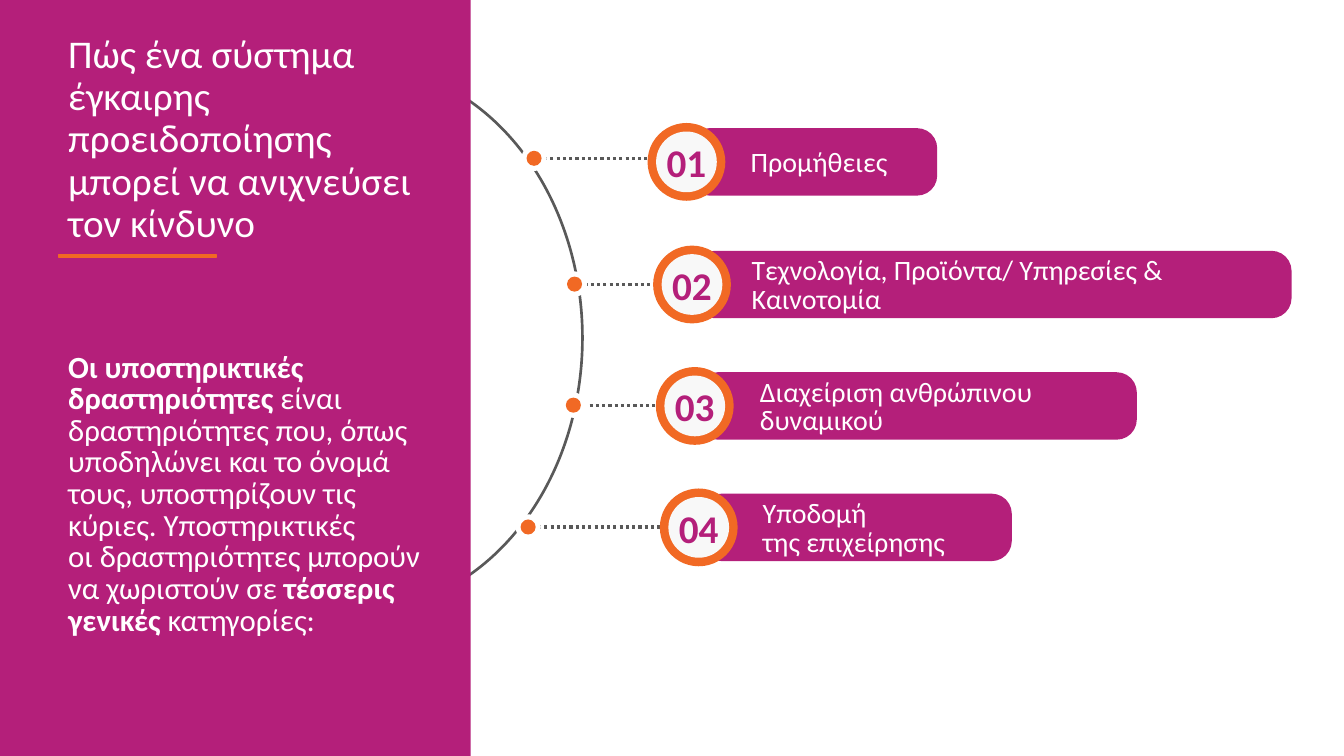
"""Builds a slide on the four supporting activities of an early warning system."""
from pptx import Presentation
from pptx.dml.color import RGBColor
from pptx.enum.dml import MSO_LINE
from pptx.enum.shapes import MSO_CONNECTOR, MSO_SHAPE
from pptx.enum.text import MSO_ANCHOR, PP_ALIGN
from pptx.oxml.ns import qn
from pptx.util import Cm, Pt
from lxml import etree

MAGENTA, ORANGE, GREY, WHITE, PALE = "B41F7A", "F16924", "595959", "FFFFFF", "F8F8F8"


def add_filled(kind, x, y, w, h, fill):
    sp = s.shapes.add_shape(kind, Cm(x), Cm(y), Cm(w), Cm(h))
    sp.shadow.inherit = False
    sp.fill.solid()
    sp.fill.fore_color.rgb = RGBColor.from_string(fill)
    sp.line.fill.background()
    return sp


def write(sp, paragraphs, size, color, spacing=None, bold=None):
    tf = sp.text_frame
    tf.word_wrap = True
    for i, runs in enumerate(paragraphs):
        p = tf.paragraphs[0] if i == 0 else tf.add_paragraph()
        p.line_spacing = spacing
        p.font.name = "Calibri"
        p.font.size = Pt(size)
        p.font.bold = bold
        p.font.color.rgb = RGBColor.from_string(color)
        for text, strong in runs:
            r = p.add_run()
            r.text = text
            if strong:
                r.font.bold = True
    return tf


prs = Presentation()
prs.slide_width, prs.slide_height = Cm(33.87), Cm(19.05)
s = prs.slides.add_slide(prs.slide_layouts[6])

arc = s.shapes.add_shape(MSO_SHAPE.ARC, Cm(3.35), Cm(1.63), Cm(11.33), Cm(13.77))
arc.adjustments[0], arc.adjustments[1] = 162, 54
arc.shadow.inherit = False
arc.fill.background()
arc.line.color.rgb = RGBColor.from_string(GREY)
arc.line.width = Pt(1.91)

for x, y, end in [(13.46, 3.99, 18.06), (14.48, 7.16, 18.01),
                  (14.45, 10.21, 19.18), (13.31, 13.28, 17.91)]:
    line = s.shapes.add_connector(MSO_CONNECTOR.STRAIGHT, Cm(x + 0.25), Cm(y), Cm(end), Cm(y))
    line.line.color.rgb = RGBColor.from_string(GREY)
    line.line.width = Pt(2.25)
    line.line.dash_style = MSO_LINE.ROUND_DOT
    etree.SubElement(line._element.spPr, qn("a:effectLst"))
    for d, color in [(0.64, WHITE), (0.38, ORANGE)]:
        add_filled(MSO_SHAPE.OVAL, x - d / 2, y - d / 2, d, d, color)

add_filled(MSO_SHAPE.RECTANGLE, 0, 0, 11.86, 19.05, MAGENTA)
title = s.shapes.add_textbox(Cm(1.47), Cm(0.74), Cm(9.63), Cm(6.83))
write(title, [[("Πώς ένα σύστημα έγκαιρης προειδοποίησης μπορεί να ανιχνεύσει τον κίνδυνο", False)]],
      28, WHITE, 0.9)
body = s.shapes.add_textbox(Cm(1.47), Cm(8.76), Cm(9.63), Cm(10.2))
write(body, [
    [("Οι υποστηρικτικές δραστηριότητες ", True),
     ("είναι δραστηριότητες που, όπως υποδηλώνει και το όνομά τους, "
      "υποστηρίζουν τις κύριες. Υποστηρικτικές", False)],
    [("οι δραστηριότητες μπορούν να χωριστούν σε ", False),
     ("τέσσερις γενικές ", True), ("κατηγορίες:", False)],
], 22, WHITE, Pt(22.6))
rule = add_filled(MSO_SHAPE.RECTANGLE, 1.47, 6.43, 3.99, 0.05, ORANGE)
rule.line.color.rgb = RGBColor.from_string(ORANGE)
rule.line.width = Pt(1)

activities = [
    (17.3, 4.08, 6.25, 18.67, 10.87, ["Προμήθειες"]),
    (17.44, 7.17, 15.04, 18.69, 13.84, ["Τεχνολογία, Προϊόντα/ Υπηρεσίες & Καινοτομία"]),
    (17.51, 10.23, 11.07, 18.9, 9.78, ["Διαχείριση ανθρώπινου δυναμικού"]),
    (17.61, 13.29, 7.82, 18.97, 8.56, ["Υποδομή", "της επιχείρησης"]),
]
for n, (x, y, pill_w, text_x, text_w, lines) in enumerate(activities, 1):
    pill = add_filled(MSO_SHAPE.ROUNDED_RECTANGLE, x + 0.07, y - 0.85, pill_w, 1.7, MAGENTA)
    pill.adjustments[0] = 0.3
    label = s.shapes.add_textbox(Cm(text_x), Cm(y - 0.8), Cm(text_w), Cm(1.7))
    tf = write(label, [[(text, False)] for text in lines], 20, WHITE, Pt(20.4))
    tf.vertical_anchor = MSO_ANCHOR.MIDDLE
    for d, color in [(1.96, ORANGE), (1.53, PALE)]:
        badge = add_filled(MSO_SHAPE.OVAL, x - d / 2, y - d / 2, d, d, color)
    tf = write(badge, [[(f"{n:02}", False)]], 28, MAGENTA, bold=True)
    tf.word_wrap = False
    tf.margin_left = tf.margin_right = tf.margin_top = tf.margin_bottom = 0
    tf.vertical_anchor = MSO_ANCHOR.MIDDLE
    tf.paragraphs[0].alignment = PP_ALIGN.CENTER

prs.save("out.pptx")
